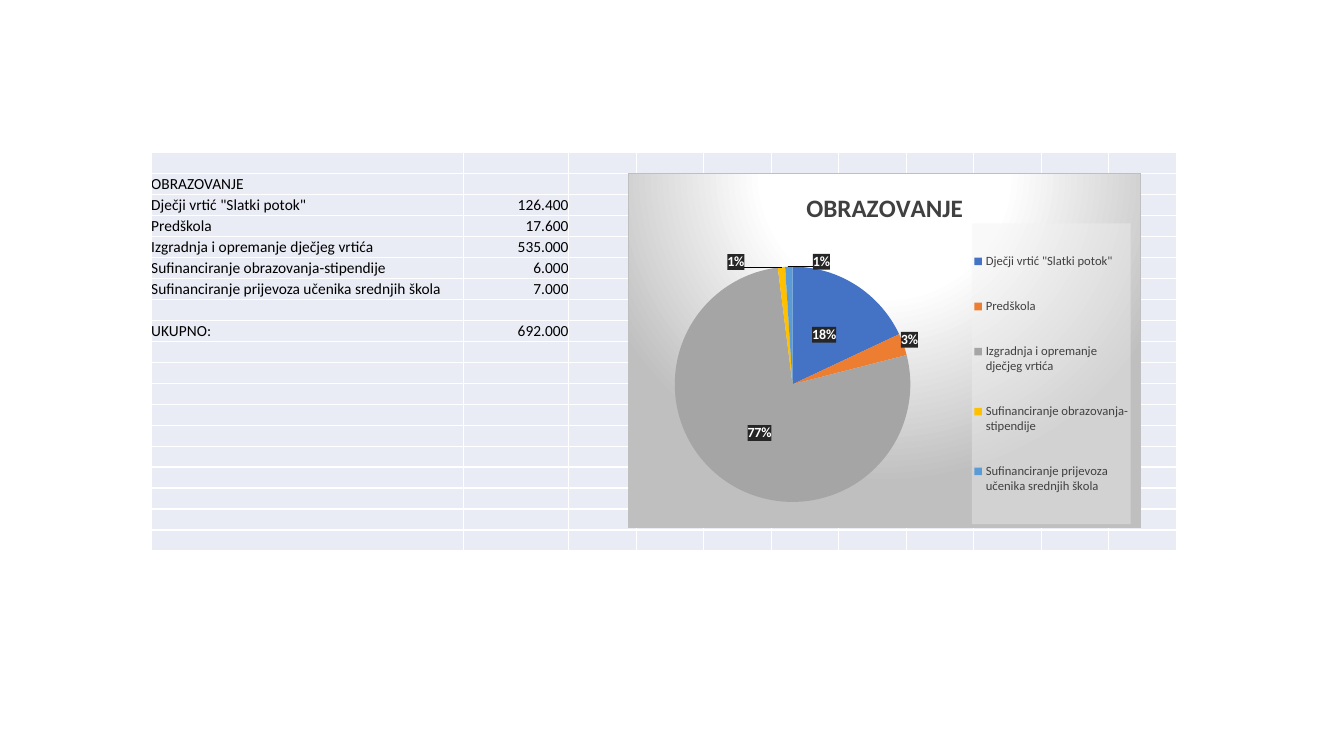
"""Builds a budget slide with an education table and a pie chart."""
from copy import deepcopy
from dataclasses import dataclass

from lxml import etree
from pptx import Presentation
from pptx.chart.data import CategoryChartData
from pptx.dml.color import RGBColor
from pptx.enum.chart import XL_CHART_TYPE, XL_LABEL_POSITION, XL_LEGEND_POSITION
from pptx.enum.text import MSO_ANCHOR, PP_ALIGN
from pptx.oxml import parse_xml
from pptx.oxml.ns import nsdecls, qn
from pptx.util import Inches, Pt

PIE = XL_CHART_TYPE.PIE
CENTER = XL_LABEL_POSITION.CENTER
LEGEND_RIGHT = XL_LEGEND_POSITION.RIGHT
BOTTOM = MSO_ANCHOR.BOTTOM
LEFT, RIGHT = PP_ALIGN.LEFT, PP_ALIGN.RIGHT


@dataclass(frozen=True)
class Theme:
    """Holds the colours and type sizes."""
    font: str = "Calibri"
    ink: str = "000000"
    heading: str = "404040"
    white: str = "FFFFFF"
    cell: str = "E9EBF5"
    shade: str = "BFBFBF"
    label_box: str = "262626"
    legend_box: str = "F2F2F2"
    slices: tuple = ("4472C4", "ED7D31", "A5A5A5", "FFC000", "5B9BD5")
    table_size: int = 11
    title_size: int = 18
    label_size: int = 10
    legend_size: int = 9


def apply(target, formats):
    """Set each named attribute on the target."""
    for name, value in formats.items():
        setattr(target, name, value)


def solid(color, alpha=100):
    """Return the XML of a solid fill."""
    return (f'<a:solidFill><a:srgbClr val="{color}">'
            f'<a:alpha val="{alpha * 1000}"/></a:srgbClr></a:solidFill>')


def chart_box(content):
    """Return a chart shape-properties element."""
    return parse_xml(f'<c:spPr {nsdecls("c", "a")}>{content}</c:spPr>')


def layout(**places):
    """Return a manual layout element with the given fractions."""
    modes = '<c:xMode val="edge"/><c:yMode val="edge"/>' if "w" in places else ""
    target = '<c:layoutTarget val="inner"/>' if places.pop("inner", False) else ""
    values = "".join(f'<c:{key} val="{value}"/>' for key, value in places.items())
    return parse_xml(f'<c:layout {nsdecls("c")}><c:manualLayout>{target}{modes}'
                     f'{values}</c:manualLayout></c:layout>')


class BudgetSlide:
    """Draws styled elements on one slide."""

    def __init__(self, slide, theme):
        """Keep the slide and its theme."""
        self.slide = slide
        self.theme = theme

    def style_font(self, font, size, color, bold=False):
        """Format a font."""
        apply(font, {"name": self.theme.font, "size": Pt(size), "bold": bold})
        font.color.rgb = RGBColor.from_string(color)

    def style_cell(self, cell, text, align):
        """Fill, border and write one table cell."""
        theme = self.theme
        apply(cell, {"margin_left": 0, "margin_right": 0, "margin_top": 0,
                     "margin_bottom": 0, "vertical_anchor": BOTTOM})
        properties = cell._tc.get_or_add_tcPr()
        for side in "LRTB":
            properties.append(parse_xml(
                f'<a:ln{side} {nsdecls("a")} w="{Pt(1)}">{solid(theme.white)}</a:ln{side}>'))
        cell.fill.solid()
        cell.fill.fore_color.rgb = RGBColor.from_string(theme.cell)
        paragraph = cell.text_frame.paragraphs[0]
        if text:
            paragraph.alignment = align
            run = paragraph.add_run()
            run.text = text
            self.style_font(run.font, theme.table_size, theme.ink)
        else:
            etree.SubElement(paragraph._p, qn("a:endParaRPr"),
                             sz=str(theme.table_size * 100))

    def table(self, box, widths, row_count, entries):
        """Add a grid with entries keyed by row."""
        grid = self.slide.shapes.add_table(
            row_count, len(widths), *map(Inches, box)).table
        apply(grid, {"first_row": False, "horz_banding": False})
        for column, width in zip(grid.columns, widths):
            column.width = Inches(width)
        for index, row in enumerate(grid.rows):
            row.height = Inches(box[3] / row_count)
            texts = entries.get(index, ())
            for place, cell in enumerate(row.cells):
                text = texts[place] if place < len(texts) else ""
                self.style_cell(cell, text, RIGHT if place else LEFT)

    def pie(self, box, title, shares, label_shifts):
        """Add a pie chart with a legend and percentage labels."""
        theme = self.theme
        data = CategoryChartData()
        data.categories = list(shares)
        data.add_series(title, list(shares.values()))
        chart = self.slide.shapes.add_chart(PIE, *map(Inches, box), data).chart
        self.style_font(chart.font, theme.label_size, theme.ink)
        apply(chart, {"has_title": True, "has_legend": True})
        heading = chart.chart_title.text_frame.paragraphs[0].add_run()
        heading.text = title
        self.style_font(heading.font, theme.title_size, theme.heading, True)
        apply(chart.legend, {"position": LEGEND_RIGHT, "include_in_layout": False})
        self.style_font(chart.legend.font, theme.legend_size, theme.heading)
        plot = chart.plots[0]
        plot.vary_by_categories = True
        for index, color in enumerate(theme.slices):
            fill = plot.series[0].points[index].format.fill
            fill.solid()
            fill.fore_color.rgb = RGBColor.from_string(color)
        self.pie_labels(plot.series[0].data_labels, label_shifts)
        self.pie_frame(chart.element)

    def pie_labels(self, labels, shifts):
        """Style the labels and move those of thin slices."""
        theme = self.theme
        apply(labels, {"number_format": "0%", "number_format_is_linked": False,
                       "show_percentage": True, "show_value": False,
                       "position": CENTER})
        self.style_font(labels.font, theme.label_size, theme.white, True)
        group = labels._element
        group.find(qn("c:numFmt")).addnext(chart_box(solid(theme.label_box, 80)))
        shared = [part for part in group if part.tag != qn("c:showLeaderLines")]
        for order, (index, (across, down)) in enumerate(shifts.items()):
            moved = parse_xml(f'<c:dLbl {nsdecls("c")}><c:idx val="{index}"/></c:dLbl>')
            moved.append(layout(x=across, y=down))
            moved.extend(deepcopy(part) for part in shared)
            group.insert(order, moved)

    def pie_frame(self, space):
        """Place the chart parts and paint the backgrounds."""
        theme = self.theme
        chart = space.find(qn("c:chart"))
        places = {"c:title": layout(x=0.28, y=0.06),
                  "c:legend": layout(x=0.67, y=0.14, w=0.31, h=0.85),
                  "c:plotArea": layout(inner=True, x=0.09, y=0.26, w=0.46, h=0.67)}
        for tag, place in places.items():
            part = chart.find(qn(tag))
            for old in part.findall(qn("c:layout")):
                part.remove(old)
            overlay = part.find(qn("c:overlay"))
            if overlay is None:
                part.insert(0, place)
            else:
                overlay.addprevious(place)
        chart.find(qn("c:legend")).find(qn("c:overlay")).addnext(
            chart_box(solid(theme.legend_box, 39)))
        stops = "".join(
            f'<a:gs pos="{spot * 1000}"><a:srgbClr val="{color}"/></a:gs>'
            for spot, color in ((0, theme.white), (39, theme.white), (100, theme.shade)))
        chart.addnext(chart_box(
            f'<a:gradFill><a:gsLst>{stops}</a:gsLst><a:path path="circle">'
            '<a:fillToRect l="50000" t="-80000" r="50000" b="180000"/></a:path>'
            f'</a:gradFill><a:ln w="{Pt(0.75)}">{solid(theme.shade)}</a:ln>'))


def main():
    """Build and save the presentation."""
    deck = Presentation()
    apply(deck, {"slide_width": Inches(13.33), "slide_height": Inches(7.5)})
    budget = BudgetSlide(deck.slides.add_slide(deck.slide_layouts[6]), Theme())
    topic = "OBRAZOVANJE"
    items = [('Dječji vrtić "Slatki potok"', "126.400", 18),
             ("Predškola", "17.600", 3),
             ("Izgradnja i opremanje dječjeg vrtića", "535.000", 77),
             ("Sufinanciranje obrazovanja-stipendije", "6.000", 1),
             ("Sufinanciranje prijevoza učenika srednjih škola", "7.000", 1)]
    entries = {1: (topic,), 8: ("UKUPNO:", "692.000")}
    entries.update({row: item[:2] for row, item in enumerate(items, 2)})
    budget.table((1.5, 1.51, 10.14, 3.96), [3.1, 1.04] + [0.67] * 9, 19, entries)
    budget.pie((6.23, 1.72, 5.09, 3.52), topic,
               {name: share for name, _, share in items},
               {1: (0.12, -0.07), 3: (-0.1, -0.18), 4: (0.06, -0.18)})
    deck.save("out.pptx")


if __name__ == "__main__":
    main()
